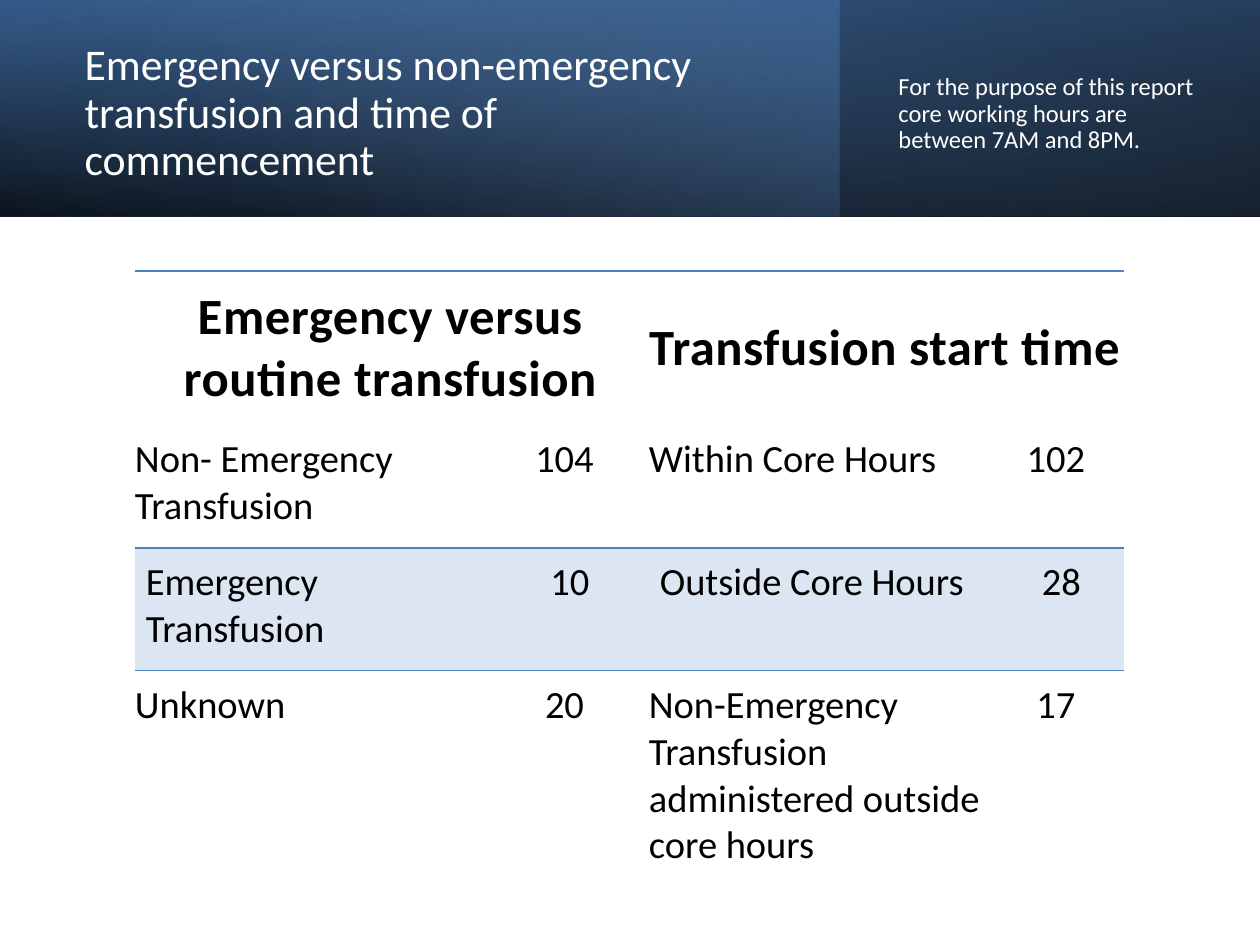
from dataclasses import dataclass

from lxml.etree import SubElement
from pptx import Presentation
from pptx.dml.color import RGBColor as Rgb
from pptx.enum.shapes import MSO_SHAPE as Shape
from pptx.enum.text import MSO_ANCHOR as Anchor, MSO_AUTO_SIZE as AutoSize, PP_ALIGN as Align
from pptx.oxml.ns import qn
from pptx.util import Emu, Pt

PX_PER_INCH = 126
NO_STYLE = "{2D5ABB26-0587-4C30-8999-92F81FD0307C}"


@dataclass(frozen=True)
class Theme:
    font: str = "Calibri"
    black: str = "000000"
    white: str = "FFFFFF"
    navy: str = "376092"
    blue: str = "4F81BD"
    pale: str = "95B3D7"
    band: str = "DCE6F2"
    title: int = 25
    note: int = 14
    heading: int = 29
    body: int = 22


THEME = Theme()

BANNER = [
    dict(width=1260, angle=100, flip=True, rotation=180,
         stops=[(0, THEME.black, 96), (100, THEME.navy, 100)]),
    dict(width=840, angle=140, stops=[(0, THEME.blue, 41), (74, THEME.pale, 0)]),
    dict(width=1260, angle=260, flip=True,
         stops=[(0, THEME.black, 63), (78, THEME.blue, 15)]),
]
BANNER_HEIGHT = 217

TITLE = "Emergency versus non-emergency transfusion and time of commencement"
NOTE = "For the purpose of this report core working hours are between 7AM and 8PM."

COLUMNS = [368, 146, 362, 113]
ROWS = [154, 123, 123, 214]
HEADINGS = ["Emergency versus routine transfusion", "Transfusion start time"]
RECORDS = [
    ["Non- Emergency Transfusion", "104", "Within Core Hours", "102"],
    ["Emergency Transfusion", "10", "Outside Core Hours", "28"],
    ["Unknown", "20", "Non-Emergency Transfusion administered outside core hours", "17"],
]
BANDED_ROW = 2


def px(value):
    return Emu(round(value * 914400 / PX_PER_INCH))


def apply(target, values):
    for name, value in values.items():
        setattr(target, name, value)


def place(shape, left, top, width, height):
    apply(shape, dict(left=px(left), top=px(top), width=px(width), height=px(height)))


def write(frame, text, size, color, bold=False, spacing=0, **paragraph_format):
    paragraph = frame.paragraphs[0]
    apply(paragraph, paragraph_format)
    run = paragraph.add_run()
    run.text = text
    apply(run.font, dict(name=THEME.font, size=Pt(size), bold=bold))
    run.font.color.rgb = Rgb.from_string(color)
    if spacing:
        run._r.get_or_add_rPr().set("spc", str(spacing))


def add_gradient_panel(slide, width, angle, stops, flip=False, rotation=0):
    panel = slide.shapes.add_shape(Shape.RECTANGLE, 0, 0, px(width), px(BANNER_HEIGHT))
    panel.shadow.inherit = False
    panel.line.fill.background()
    panel.rotation = rotation
    properties = panel._element.spPr
    if flip:
        properties.find(qn("a:xfrm")).set("flipH", "1")
    gradient = SubElement(properties, qn("a:gradFill"), rotWithShape="1")
    properties.find(qn("a:prstGeom")).addnext(gradient)
    stop_list = SubElement(gradient, qn("a:gsLst"))
    for position, color, opacity in stops:
        stop = SubElement(stop_list, qn("a:gs"), pos=str(position * 1000))
        value = SubElement(stop, qn("a:srgbClr"), val=color)
        SubElement(value, qn("a:alpha"), val=str(opacity * 1000))
    SubElement(gradient, qn("a:lin"), ang=str(angle * 60000), scaled="0")


def add_banner_text(shape, box, text, size, **paragraph_format):
    place(shape, *box)
    frame = shape.text_frame
    apply(frame, dict(word_wrap=True, auto_size=AutoSize.NONE, vertical_anchor=Anchor.MIDDLE))
    write(frame, text, size, THEME.white, alignment=Align.LEFT, line_spacing=0.9,
          **paragraph_format)


def set_border(cell, side, points):
    properties = cell._tc.get_or_add_tcPr()
    line = SubElement(properties, qn(f"a:{side}"), w=str(Pt(points)))
    properties.insert(0, line)
    fill = SubElement(line, qn("a:solidFill"))
    SubElement(fill, qn("a:srgbClr"), val=THEME.blue)


def format_cell(cell, left, right, anchor, fill=None):
    apply(cell, dict(margin_left=px(left), margin_right=px(right), margin_top=px(11),
                     margin_bottom=px(11), vertical_anchor=anchor))
    if fill:
        cell.fill.solid()
        cell.fill.fore_color.rgb = Rgb.from_string(fill)
    else:
        cell.fill.background()


def add_headings(table):
    for index, heading in enumerate(HEADINGS):
        first, second = (table.cell(0, 2 * index + offset) for offset in (0, 1))
        first.merge(second)
        for cell in (first, second):
            format_cell(cell, 0, 3, Anchor.MIDDLE)
            set_border(cell, "lnT", 1.5)
        write(first.text_frame, heading, THEME.heading, THEME.black, bold=True,
              spacing=30, alignment=Align.CENTER)


def add_records(table):
    for row, record in enumerate(RECORDS, start=1):
        banded = row == BANDED_ROW
        for column, text in enumerate(record):
            cell = table.cell(row, column)
            format_cell(cell, 11 if banded else 0, 23, Anchor.TOP,
                        THEME.band if banded else None)
            if banded:
                set_border(cell, "lnT", 0.75)
            elif row == BANDED_ROW - 1:
                set_border(cell, "lnB", 0.75)
            write(cell.text_frame, text, THEME.body, THEME.black,
                  alignment=Align.CENTER if column % 2 else Align.LEFT)


def add_transfusion_table(slide):
    frame = slide.shapes.add_table(len(ROWS), len(COLUMNS), px(135), px(271),
                                   px(sum(COLUMNS)), px(sum(ROWS)))
    table = frame.table
    apply(table, dict(first_row=False, horz_banding=False))
    table._tbl.tblPr.find(qn("a:tableStyleId")).text = NO_STYLE
    for column, width in zip(table.columns, COLUMNS):
        column.width = px(width)
    for row, height in zip(table.rows, ROWS):
        row.height = px(height)
    add_headings(table)
    add_records(table)


def main():
    presentation = Presentation()
    apply(presentation, dict(slide_width=px(1260), slide_height=px(945)))
    slide = presentation.slides.add_slide(presentation.slide_layouts[5])
    for panel in BANNER:
        add_gradient_panel(slide, **panel)
    title = slide.shapes.title
    slide.shapes._spTree.append(title._element)
    add_banner_text(title, (72, 34, 730, 160), TITLE, THEME.title)
    note = slide.shapes.add_textbox(0, 0, 0, 0)
    add_banner_text(note, (886, 54, 334, 121), NOTE, THEME.note, space_before=Pt(10))
    add_transfusion_table(slide)
    presentation.save("out.pptx")


if __name__ == "__main__":
    main()
